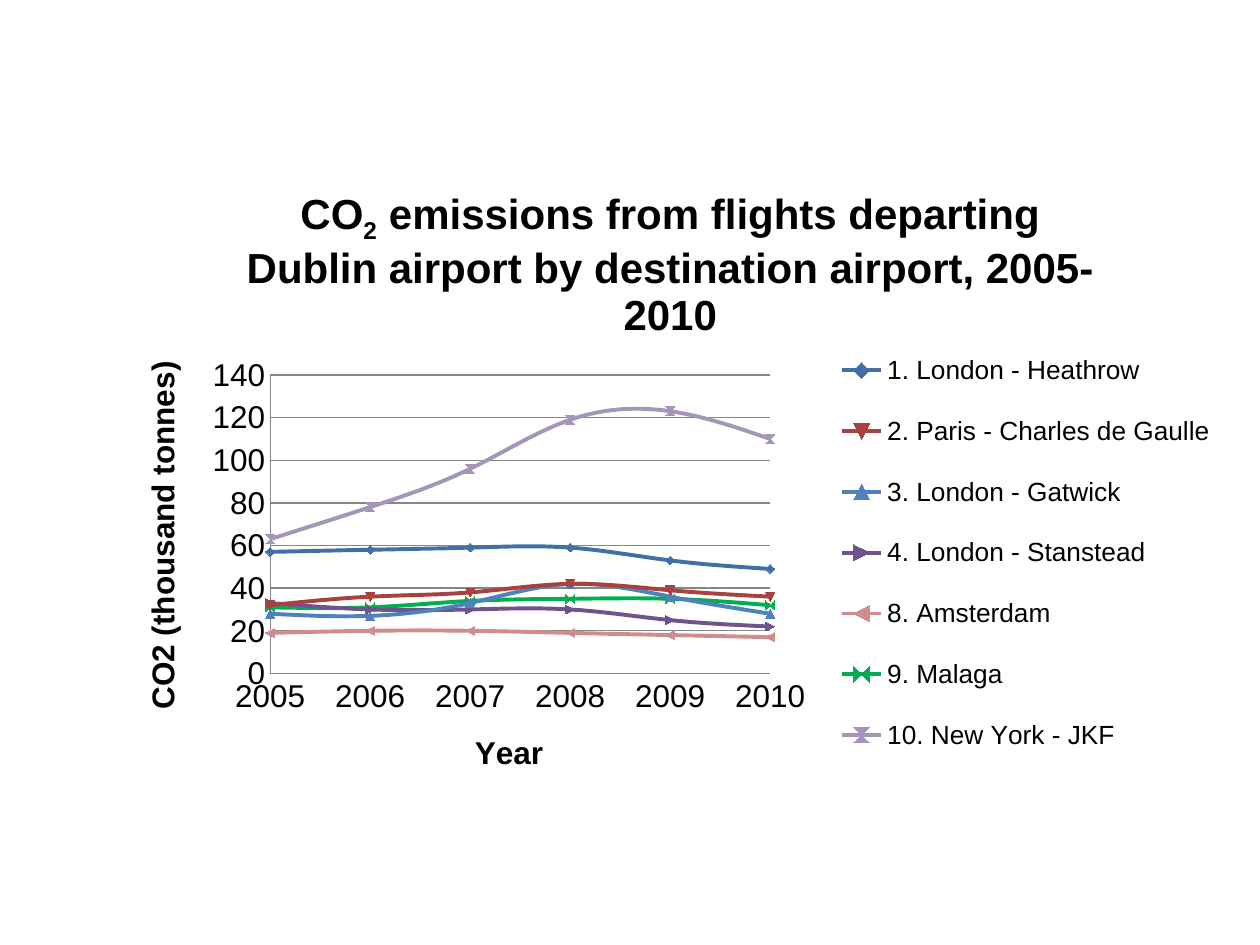
from dataclasses import dataclass

from lxml.etree import SubElement
from pptx import Presentation
from pptx.chart.data import XyChartData
from pptx.dml.color import RGBColor
from pptx.enum.chart import (XL_CHART_TYPE, XL_LEGEND_POSITION,
                             XL_MARKER_STYLE, XL_TICK_MARK)
from pptx.oxml.ns import qn
from pptx.util import Pt


@dataclass(frozen=True)
class Theme:
    font: str = "Arial"
    ink: str = "000000"
    rule: str = "868686"
    title: int = 24
    body: int = 18
    legend: int = 15


THEME = Theme()
YEARS = range(2005, 2011)
ROUTES = [
    ("1. London - Heathrow", "416FA6", [57, 58, 59, 59, 53, 49]),
    ("2. Paris - Charles de Gaulle", "A8423F", [32, 36, 38, 42, 39, 36]),
    ("3. London - Gatwick", "4F81BD", [28, 27, 33, 42, 36, 28]),
    ("4. London - Stanstead", "6E548D", [33, 30, 30, 30, 25, 22]),
    ("8. Amsterdam", "CF8E8D", [19, 20, 20, 19, 18, 17]),
    ("9. Malaga", "00B050", [31, 31, 34, 35, 35, 32]),
    ("10. New York - JKF", "A596B9", [63, 78, 96, 119, 123, 110]),
]


def set_values(target, values):
    for name, value in values.items():
        setattr(target, name, value)


def style_font(font, size, bold=False):
    set_values(font, {"name": THEME.font, "size": Pt(size), "bold": bold})
    font.color.rgb = RGBColor.from_string(THEME.ink)


def style_line(line, color, width):
    line.color.rgb = RGBColor.from_string(color)
    line.width = Pt(width)


def write_title(text_frame, parts, size):
    """Write bold (text, is_subscript) parts into a chart or axis title."""
    para = text_frame.paragraphs[0]
    for text, is_subscript in parts:
        span = para.add_run()
        span.text = text
        style_font(span.font, size, bold=True)
        if is_subscript:
            span.font._element.set("baseline", "-25000")


def place(parent, index, box, inner=False):
    """Give a chart part a manual layout, in fractions of the chart."""
    for old in parent.findall(qn("c:layout")):
        parent.remove(old)
    layout = parent.makeelement(qn("c:layout"))
    parent.insert(index, layout)
    manual = SubElement(layout, qn("c:manualLayout"))
    settings = [("layoutTarget", "inner")] if inner else []
    settings += [("xMode", "edge"), ("yMode", "edge")]
    settings += zip("xywh", map(str, box))
    for name, value in settings:
        SubElement(manual, qn(f"c:{name}")).set("val", value)


def style_axis(axis, title, limits):
    set_values(axis, limits)
    set_values(axis, {"major_tick_mark": XL_TICK_MARK.NONE,
                      "minor_tick_mark": XL_TICK_MARK.NONE})
    style_font(axis.tick_labels.font, THEME.body)
    set_values(axis.tick_labels, {"number_format": "General",
                                  "number_format_is_linked": False})
    style_line(axis.format.line, THEME.rule, 0.75)
    write_title(axis.axis_title.text_frame, [(title, False)], THEME.body)


def style_series(series, color):
    style_line(series.format.line, color, 2.25)
    series._element.find(qn("c:smooth")).set("val", "1")
    set_values(series.marker, {"style": XL_MARKER_STYLE.AUTOMATIC, "size": 5})
    series.marker.format.fill.solid()
    series.marker.format.fill.fore_color.rgb = RGBColor.from_string(color)
    style_line(series.marker.format.line, color, 0.75)


def add_emissions_chart(page, left, top, width, height):
    data = XyChartData()
    for name, _, tonnes in ROUTES:
        route = data.add_series(name)
        for year, value in zip(YEARS, tonnes):
            route.add_data_point(year, value)
    chart = page.shapes.add_chart(
        XL_CHART_TYPE.XY_SCATTER_SMOOTH, Pt(left), Pt(top), Pt(width),
        Pt(height), data).chart
    style_font(chart.font, THEME.body)
    write_title(chart.chart_title.text_frame, [
        ("CO", False), ("2", True),
        (" emissions from flights departing Dublin airport by destination "
         "airport, 2005-2010", False)], THEME.title)

    style_axis(chart.category_axis, "Year", {
        "minimum_scale": 2005, "maximum_scale": 2010, "major_unit": 1,
        "has_major_gridlines": False})
    style_axis(chart.value_axis, "CO2 (thousand tonnes)", {
        "minimum_scale": 0, "maximum_scale": 140, "major_unit": 20,
        "has_major_gridlines": True})
    style_line(chart.value_axis.major_gridlines.format.line, THEME.rule, 0.75)

    plot = chart.plots[0]
    plot.vary_by_categories = False
    for series, (_, color, _) in zip(plot.series, ROUTES):
        style_series(series, color)

    chart.has_legend = True
    set_values(chart.legend, {"position": XL_LEGEND_POSITION.RIGHT,
                              "include_in_layout": False})
    style_font(chart.legend.font, THEME.legend)
    place(chart.legend._element, 1, (0.65, 0.25, 0.34, 0.72))
    plot_area = chart._chartSpace.find(qn("c:chart")).find(qn("c:plotArea"))
    place(plot_area, 0, (0.14, 0.33, 0.45, 0.47), inner=True)


def main():
    deck = Presentation()
    set_values(deck, {"slide_width": Pt(720), "slide_height": Pt(540)})
    page = deck.slides.add_slide(deck.slide_layouts[6])
    add_emissions_chart(page, 65.5, 94.5, 635, 363)
    deck.save("out.pptx")


if __name__ == "__main__":
    main()
